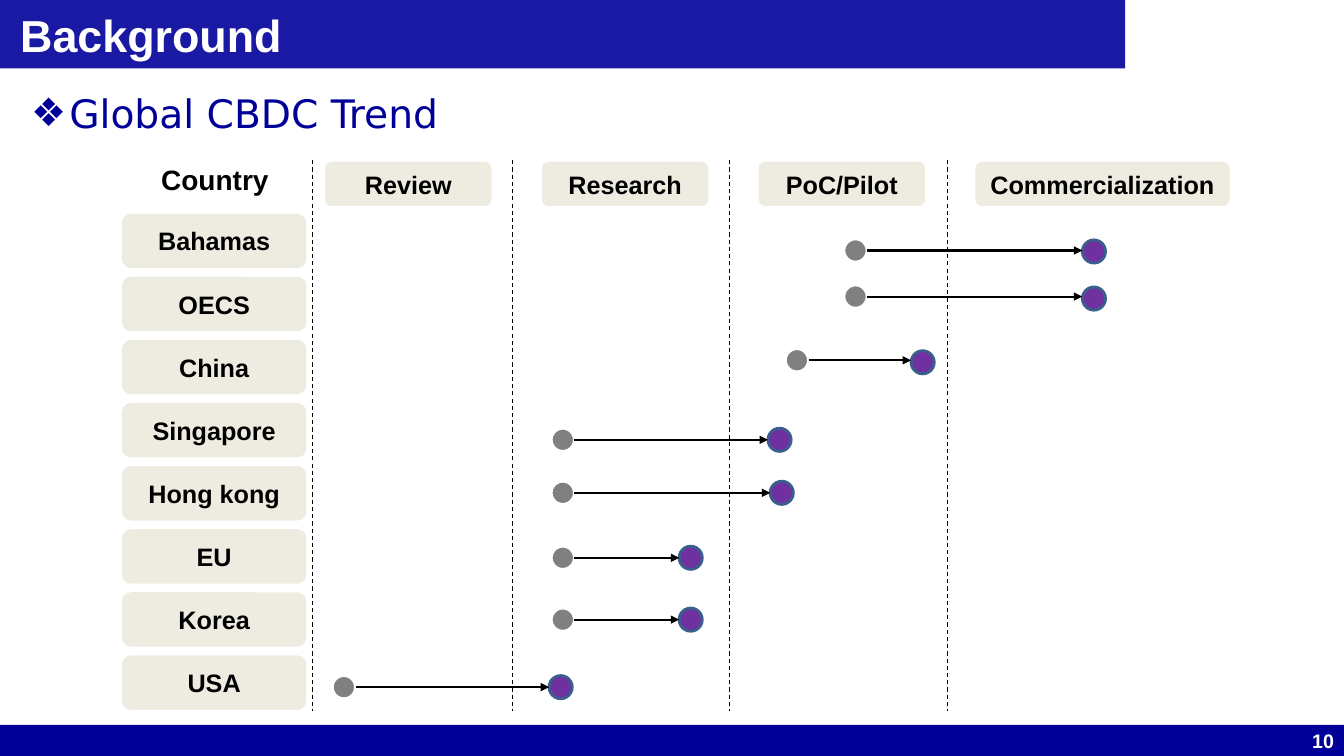
from dataclasses import dataclass

from lxml import etree
from pptx import Presentation
from pptx.dml.color import RGBColor
from pptx.enum.dml import MSO_LINE
from pptx.enum.shapes import MSO_CONNECTOR, MSO_SHAPE
from pptx.enum.text import MSO_ANCHOR, MSO_AUTO_SIZE, PP_ALIGN
from pptx.oxml.ns import qn
from pptx.util import Inches, Pt

RECT, ROUND, OVAL = MSO_SHAPE.RECTANGLE, MSO_SHAPE.ROUNDED_RECTANGLE, MSO_SHAPE.OVAL
STRAIGHT, DASH = MSO_CONNECTOR.STRAIGHT, MSO_LINE.DASH
LEFT, CENTER, RIGHT = PP_ALIGN.LEFT, PP_ALIGN.CENTER, PP_ALIGN.RIGHT
MIDDLE = MSO_ANCHOR.MIDDLE
NO_FIT = MSO_AUTO_SIZE.NONE

NAVY, BEIGE, GRAY, PURPLE, STEEL = "000099", "EEECE1", "808080", "7030A0", "3A5F8C"
BLACK, WHITE = "000000", "FFFFFF"
SLIDE_W, SLIDE_H = 13.33, 7.5

# Grid: stages run across, countries run down
STAGE_X, STAGE_PITCH, STAGE_Y, STAGE_H = 3.21, 2.15, 1.59, 0.47
ROW_Y, ROW_PITCH, ROW_H = 2.12, 0.626, 0.54
COUNTRY_X, COUNTRY_W = 1.21, 1.83
GRID_BOTTOM = 7.05
DOT = 0.23


@dataclass
class Stage:
    name: str
    width: float = 1.68


@dataclass
class Country:
    name: str
    start: float  # first dot, in stage columns
    end: float  # last dot, in stage columns
    shift: float  # first dot below the top of the row, in rows
    drop: float = 0  # last dot below the first, in inches


STAGES = [Stage("Review"), Stage("Research"), Stage("PoC/Pilot"),
          Stage("Commercialization", 2.55)]
COUNTRIES = [
    Country("Bahamas", 2.4, 3.5, 0.4, 0.01),
    Country("OECS", 2.4, 3.5, 0.13, 0.02),
    Country("China", 2.13, 2.71, 0.14, 0.02),
    Country("Singapore", 1.05, 2.05, 0.4),
    Country("Hong kong", 1.05, 2.06, 0.24),
    Country("EU", 1.05, 1.64, 0.27),
    Country("Korea", 1.05, 1.64, 0.25),
    Country("USA", 0.04, 1.04, 0.32),
]
DIVIDERS = [3.1] + [5.08 + 2.16 * i for i in range(3)]


def rgb(color: str) -> RGBColor:
    return RGBColor.from_string(color)


def col(c: float) -> float:
    return STAGE_X + c * STAGE_PITCH


def row(n: float) -> float:
    return ROW_Y + n * ROW_PITCH


def add_text(tf, text: str, size: int, color: str = BLACK, align=CENTER,
             font: str = "Arial", bold: bool = True):
    tf.word_wrap = True
    p = tf.paragraphs[0]
    p.alignment = align
    r = p.add_run()
    r.text = text
    r.font.name, r.font.size, r.font.bold = font, Pt(size), bold
    r.font.color.rgb = rgb(color)
    return p


def add_box(s, kind, x: float, y: float, w: float, h: float, fill: str,
            line: str | None = None):
    sp = s.shapes.add_shape(kind, Inches(x), Inches(y), Inches(w), Inches(h))
    sp.shadow.inherit = False
    sp.fill.solid()
    sp.fill.fore_color.rgb = rgb(fill)
    if line:
        sp.line.color.rgb = rgb(line)
        sp.line.width = Pt(2)
    else:
        sp.line.fill.background()
    sp.text_frame.vertical_anchor = MIDDLE
    return sp


def add_line(s, x1: float, y1: float, x2: float, y2: float, width: float):
    ln = s.shapes.add_connector(STRAIGHT, Inches(x1), Inches(y1), Inches(x2), Inches(y2))
    ln.line.color.rgb = rgb(BLACK)
    ln.line.width = Pt(width)
    etree.SubElement(ln._element.spPr, qn("a:effectLst"))
    return ln


def add_title(s, text: str) -> None:
    sp = s.shapes.title
    sp.left, sp.top, sp.width, sp.height = 0, 0, Inches(11.16), Inches(0.68)
    sp.fill.solid()
    sp.fill.fore_color.rgb = rgb(NAVY)
    color = sp._element.spPr.find(".//" + qn("a:srgbClr"))
    etree.SubElement(color, qn("a:alpha"), val="90000")
    tf = sp.text_frame
    tf.auto_size, tf.vertical_anchor = NO_FIT, MIDDLE
    tf.margin_left = tf.margin_right = Inches(0.2)
    add_text(tf, text, 32, WHITE, LEFT)


def add_heading(s, text: str) -> None:
    sp = s.shapes.add_textbox(Inches(0.21), Inches(0.84), Inches(12.91), Inches(6.14))
    p = add_text(sp.text_frame, text, 28, NAVY, LEFT, "DejaVu Sans", False)
    p.space_before = Pt(5.6)
    pPr = p._p.get_or_add_pPr()
    pPr.set("marL", str(Inches(0.38)))
    pPr.set("indent", str(-Inches(0.38)))
    etree.SubElement(pPr, qn("a:buFont"), typeface="DejaVu Sans")
    etree.SubElement(pPr, qn("a:buChar"), char="❖")


def add_progress(s, n: int, country: Country) -> None:
    y = row(n + country.shift)
    x1, x2 = col(country.start), col(country.end)
    add_box(s, OVAL, x1, y, DOT, DOT, GRAY, WHITE)
    add_box(s, OVAL, x2, y + country.drop, DOT, DOT, PURPLE, STEEL)
    arrow = add_line(s, x1 + DOT, y + DOT / 2, x2, y + DOT / 2, 1.5)
    etree.SubElement(arrow.line._get_or_add_ln(), qn("a:tailEnd"), type="triangle")


def main() -> None:
    prs = Presentation()
    prs.slide_width, prs.slide_height = Inches(SLIDE_W), Inches(SLIDE_H)
    s = prs.slides.add_slide(prs.slide_layouts[5])

    # Title, heading and footer band
    add_title(s, "Background")
    add_heading(s, "Global CBDC Trend")
    band = add_box(s, RECT, 0, 7.19, SLIDE_W, 0.31, NAVY)
    add_text(band.text_frame, "10", 14, WHITE, RIGHT)

    # Stage headers and dividers
    for i, stage in enumerate(STAGES):
        sp = add_box(s, ROUND, col(i), STAGE_Y, stage.width, STAGE_H, BEIGE, WHITE)
        add_text(sp.text_frame, stage.name, 18)
    for x in DIVIDERS:
        add_line(s, x, STAGE_Y, x, GRID_BOTTOM, 0.75).line.dash_style = DASH

    # Country labels and progress arrows
    sp = s.shapes.add_textbox(Inches(1.5), Inches(1.56), Inches(1.44), Inches(0.44))
    add_text(sp.text_frame, "Country", 20, align=LEFT)
    for n, country in enumerate(COUNTRIES):
        sp = add_box(s, ROUND, COUNTRY_X, row(n), COUNTRY_W, ROW_H, BEIGE)
        add_text(sp.text_frame, country.name, 18)
        add_progress(s, n, country)

    prs.save("out.pptx")


if __name__ == "__main__":
    main()
